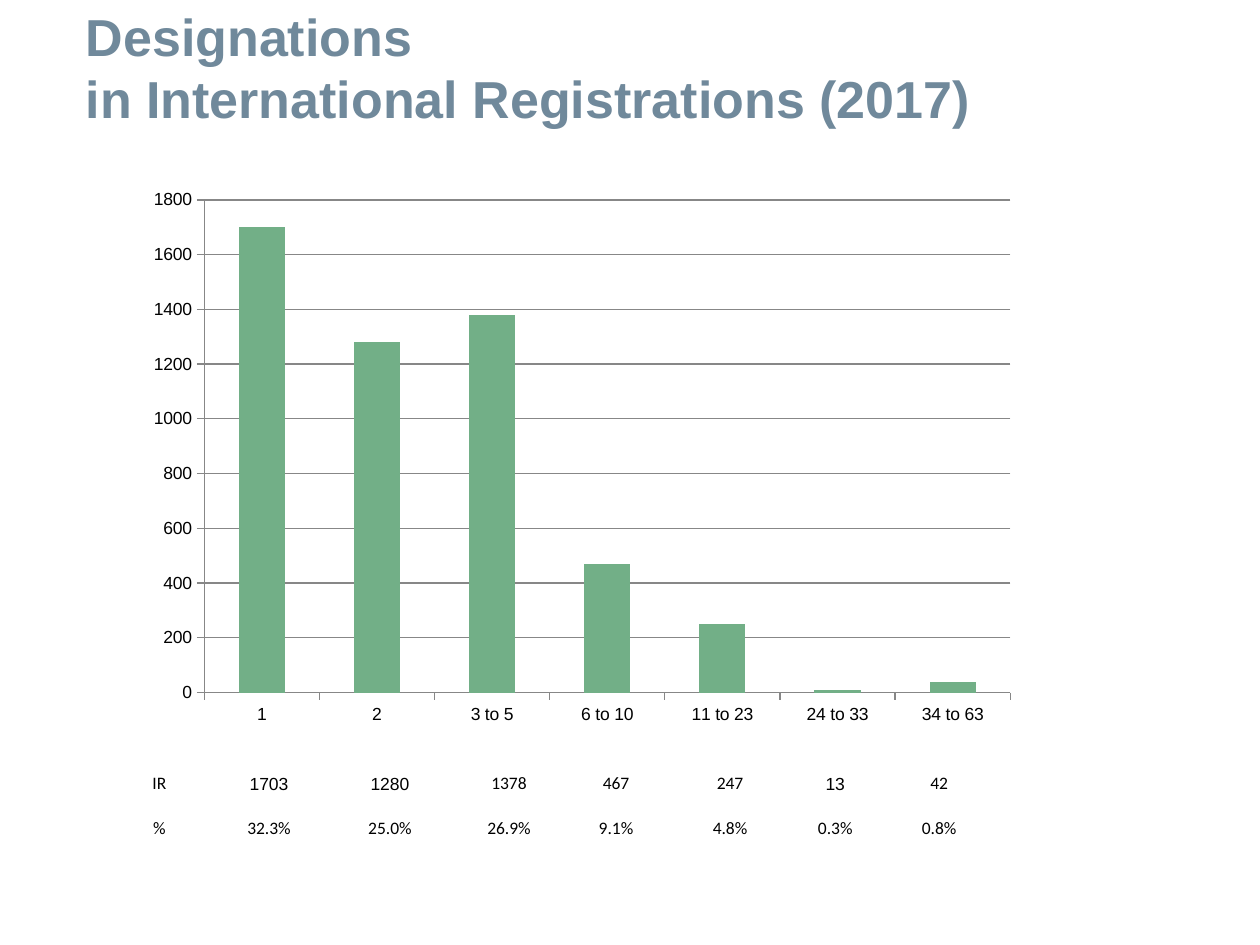
from pptx import Presentation
from pptx.util import Inches, Pt
from pptx.dml.color import RGBColor
from pptx.chart.data import CategoryChartData
from pptx.enum.chart import XL_CHART_TYPE as Kind, XL_TICK_MARK as Tick
from pptx.enum.text import PP_ALIGN as Align, MSO_ANCHOR as Anchor

TITLE = "Designations \vin International Registrations (2017)"
GROUPS = ["1", "2", "3 to 5", "6 to 10", "11 to 23", "24 to 33", "34 to 63"]
BARS = [1700, 1280, 1380, 470, 250, 10, 40]
ROWS = [
    ["IR", "1703", "1280", "1378", "467", "247", "13", "42"],
    ["%", "32.3%", "25.0%", "26.9%", "9.1%", "4.8%", "0.3%", "0.8%"],
]
WIDTHS = [0.87, 0.87, 1.05, 0.84, 0.86, 0.95, 0.72, 0.93]
ARIAL = {"1703", "1280", "13"}
BLACK, GREY, GREEN, SLATE = "000000", "878787", "72AF87", "70899B"


def paint(color, code):
    color.rgb = RGBColor.from_string(code)


def style(font, size, face, code, bold=False):
    font.size, font.name, font.bold = Pt(size), face, bold
    paint(font.color, code)


def write(frame, text, size=10, face="Arial", code=BLACK, bold=False,
          align=Align.LEFT):
    para = frame.paragraphs[0]
    para.text = text
    para.alignment = align
    for run in para.runs:
        style(run.font, size, face, code, bold)


def add_title(slide):
    title = slide.shapes.title
    title.left, title.top = Inches(0.58), Inches(0.17)
    title.width, title.height = Inches(10.17), Inches(0.8)
    frame = title.text_frame
    frame.vertical_anchor = Anchor.MIDDLE
    frame.margin_bottom = Inches(0.13)
    write(frame, TITLE, size=29.7, code=SLATE, bold=True)


def add_bars(slide):
    data = CategoryChartData()
    data.categories = GROUPS
    data.add_series("Series 1", BARS)
    chart = slide.shapes.add_chart(
        Kind.COLUMN_CLUSTERED, Inches(1.08), Inches(1.42),
        Inches(7.08), Inches(4.42), data).chart
    chart.has_legend = chart.has_title = False
    style(chart.font, 10, "Arial", BLACK)
    plot = chart.plots[0]
    plot.gap_width, plot.vary_by_categories = 150, False
    fill = plot.series[0].format.fill
    fill.solid()
    paint(fill.fore_color, GREEN)
    values = chart.value_axis
    values.minimum_scale, values.maximum_scale, values.major_unit = 0, 1800, 200
    values.has_major_gridlines = True
    for axis in (chart.category_axis, values):
        axis.major_tick_mark, axis.minor_tick_mark = Tick.OUTSIDE, Tick.NONE
    for part in (chart.category_axis, values, values.major_gridlines):
        part.format.line.width = Pt(0.75)
        paint(part.format.line.color, GREY)


def add_grid(slide):
    table = slide.shapes.add_table(
        len(ROWS), len(WIDTHS), Inches(0.83), Inches(5.95),
        Inches(sum(WIDTHS)), Inches(0.71)).table
    table.first_row = table.horz_banding = False
    for col, width in zip(table.columns, WIDTHS):
        col.width = Inches(width)
    for r, row in enumerate(ROWS):
        table.rows[r].height = Inches(0.71 / len(ROWS))
        for c, text in enumerate(row):
            cell = table.cell(r, c)
            cell.fill.background()
            cell.vertical_anchor = Anchor.BOTTOM
            cell.margin_left = cell.margin_right = cell.margin_top = Inches(0.01)
            cell.margin_bottom = 0
            face = "Arial" if text in ARIAL else "Calibri"
            write(cell.text_frame, text, face=face, align=Align.CENTER)


def main():
    deck = Presentation()
    deck.slide_width, deck.slide_height = Inches(10), Inches(7.5)
    slide = deck.slides.add_slide(deck.slide_layouts[5])
    add_title(slide)
    add_grid(slide)
    add_bars(slide)
    deck.save("out.pptx")


if __name__ == "__main__":
    main()
